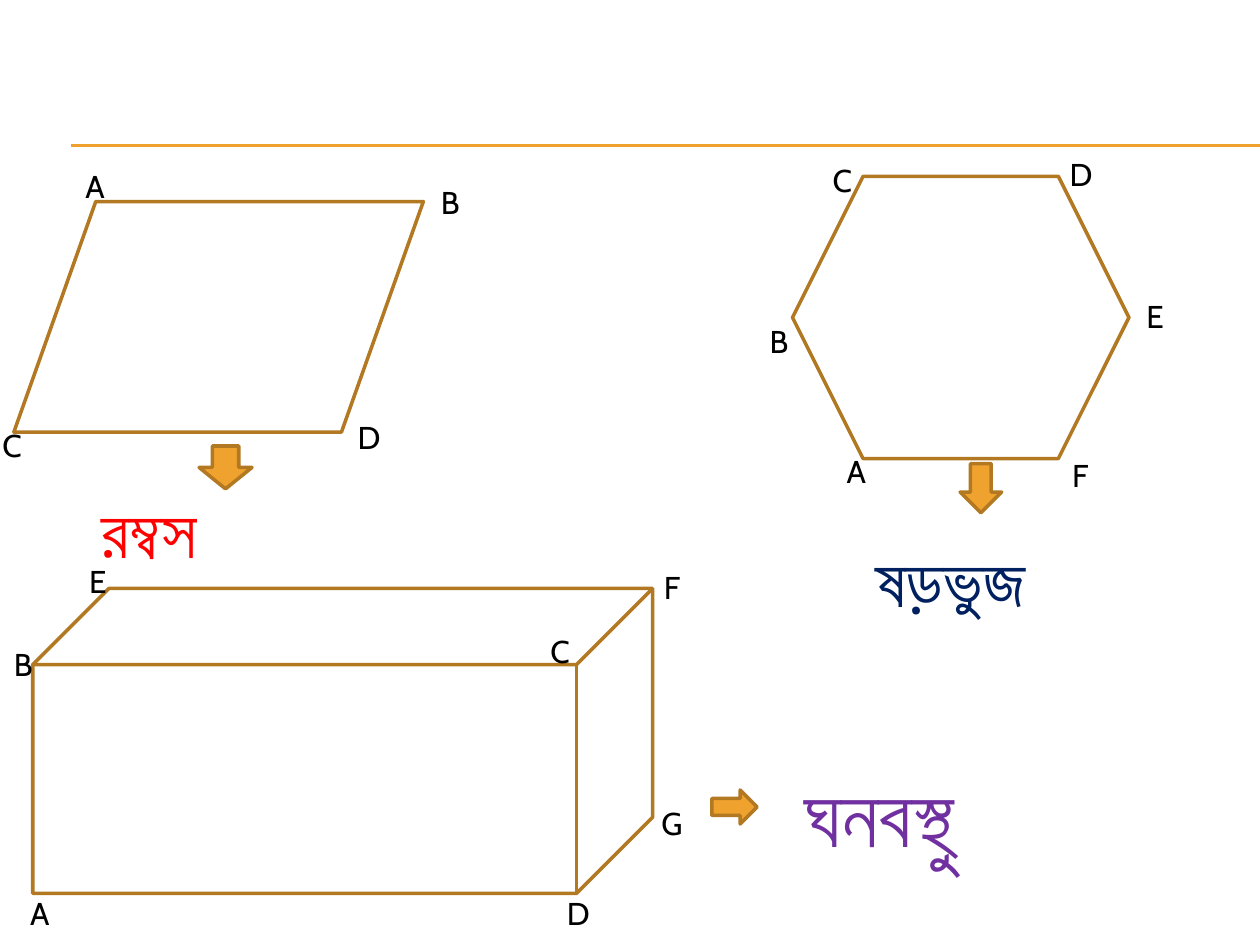
from pptx import Presentation, util as u
from pptx.dml.color import RGBColor
from pptx.enum import shapes, text
from pptx.oxml import parse_xml
from pptx.oxml.ns import nsdecls

GOLD, BROWN = "F0A22E", "B27822"
KIND = shapes.MSO_SHAPE
# Box width of each corner letter
WIDE = dict(A=0.35, B=0.34, C=0.34, D=0.36, E=0.32, F=0.32, G=0.36)


def color(code):
    return RGBColor.from_string(code)


def place(box):
    return [u.Inches(n) for n in box]


def add_rule(slide, y):
    line = slide.shapes.add_connector(
        shapes.MSO_CONNECTOR.STRAIGHT, *place((0.56, y, 10, y)))
    line.line.color.rgb = color(GOLD)
    line.line.width = u.Pt(0.75)
    line._element.spPr.append(parse_xml(f"<a:effectLst {nsdecls('a')}/>"))


def add_form(slide, kind, box, fill=None):
    form = slide.shapes.add_shape(kind, *place(box))
    form.shadow.inherit = False
    if fill:
        form.fill.solid()
        form.fill.fore_color.rgb = color(fill)
    else:
        form.fill.background()
    form.line.color.rgb = color(BROWN)
    form.line.width = u.Pt(2)


def add_text(slide, words, box, size, code, wrap=False):
    frame = slide.shapes.add_textbox(*place(box)).text_frame
    frame.word_wrap = wrap
    frame.auto_size = text.MSO_AUTO_SIZE.SHAPE_TO_FIT_TEXT
    run = frame.paragraphs[0].add_run()
    run.text = words
    style = {"name": "Cabin", "size": u.Pt(size)}
    for key, value in style.items():
        setattr(run.font, key, value)
    run.font.color.rgb = color(code)


def add_marks(slide, marks):
    for mark, x, y in marks:
        add_text(slide, mark, (x, y, WIDE[mark], 0.4), 18, "000000")


def main():
    deck = Presentation()
    deck.slide_width, deck.slide_height = u.Inches(10), u.Inches(7.5)
    slide = deck.slides.add_slide(deck.slide_layouts[6])

    # Double rule under the title area
    for y in (1.15, 1.16):
        add_rule(slide, y)

    # Outlined figures
    add_form(slide, KIND.FLOWCHART_DATA, (0.11, 1.6, 3.25, 1.83))
    add_form(slide, KIND.HEXAGON, (6.29, 1.4, 2.67, 2.24))
    add_form(slide, KIND.CUBE, (0.26, 4.67, 4.92, 2.42))

    # Figure names
    add_text(slide, "রম্বস", (0.71, 3.83, 1.95, 0.77), 40, "FF0000", True)
    add_text(slide, "ষড়ভুজ", (6.85, 4.22, 1.88, 0.77), 40, "002060")
    add_text(slide, "ঘনবস্থু", (6.29, 6.01, 2.88, 0.91), 48, "7030A0", True)

    # Arrows from figure to name
    add_form(slide, KIND.RIGHT_ARROW, (5.65, 6.27, 0.36, 0.27), GOLD)
    add_form(slide, KIND.DOWN_ARROW, (1.58, 3.54, 0.42, 0.34), GOLD)
    add_form(slide, KIND.DOWN_ARROW, (7.62, 3.68, 0.33, 0.39), GOLD)

    # Corner letters: rhombus, hexagon, cuboid
    add_marks(slide, [("A", 0.58, 1.28), ("B", 3.4, 1.4),
                      ("C", -0.08, 3.33), ("D", 2.74, 3.27)])
    add_marks(slide, [("A", 6.62, 3.54), ("B", 6.01, 2.51), ("C", 6.51, 1.23),
                      ("D", 8.39, 1.18), ("E", 9, 2.31), ("F", 8.41, 3.57)])
    add_marks(slide, [("A", 0.14, 7.05), ("C", 4.27, 4.97), ("D", 4.4, 7.05),
                      ("E", 0.61, 4.41), ("F", 5.17, 4.46), ("G", 5.15, 6.33)])
    # The cuboid's B sits in a narrow box at the slide edge
    add_text(slide, "B", (0.11, 5.07, 0.05, 0.4), 18, "000000", True)

    deck.save("out.pptx")


if __name__ == "__main__":
    main()
